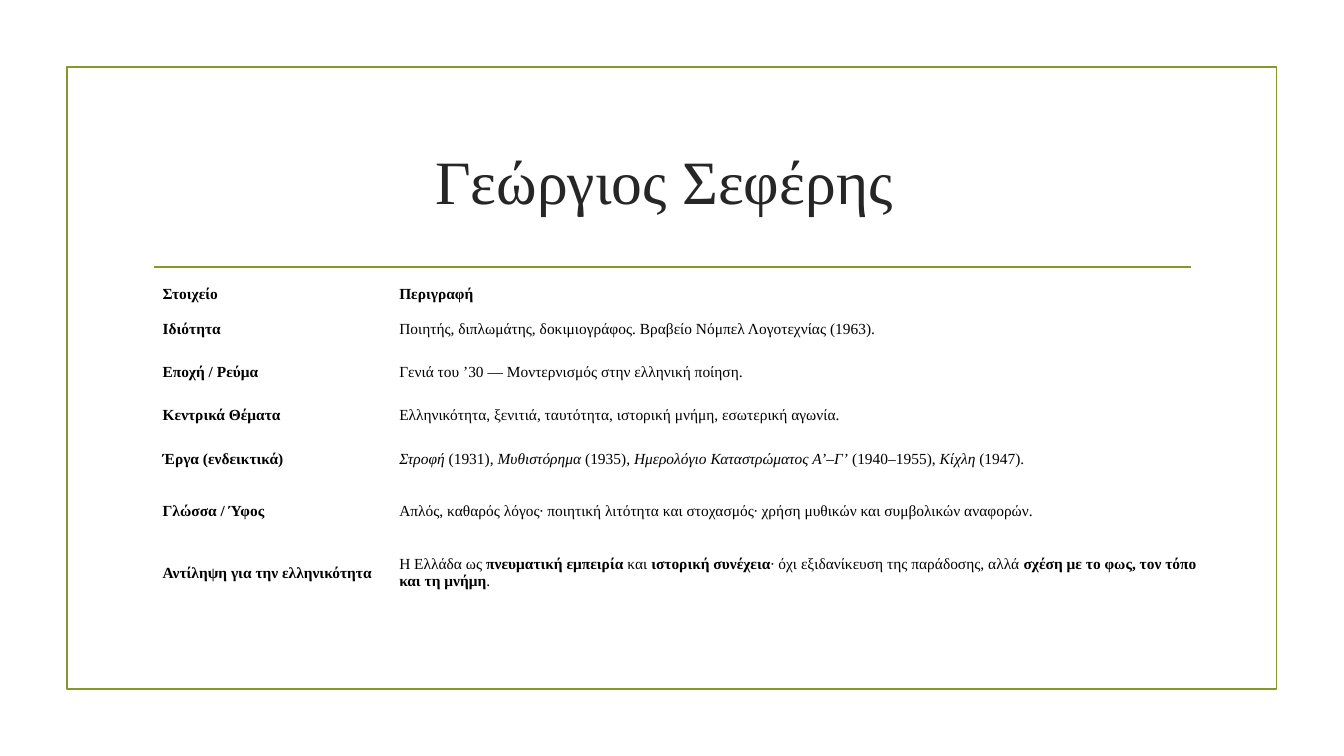
from lxml import etree
from pptx import Presentation
from pptx.dml.color import RGBColor
from pptx.enum import shapes, text
from pptx.oxml.ns import qn
from pptx.util import Pt

COLORS = {"olive": "83992A", "title": "262626", "body": "000000"}

# *bold* and _italic_ mark emphasis inside a cell.
ROWS = [
    (18, "*Στοιχείο*", "*Περιγραφή*"),
    (31, "*Ιδιότητα*",
     "Ποιητής, διπλωμάτης, δοκιμιογράφος. Βραβείο Νόμπελ Λογοτεχνίας (1963)."),
    (31, "*Εποχή / Ρεύμα*", "Γενιά του ’30 — Μοντερνισμός στην ελληνική ποίηση."),
    (31, "*Κεντρικά Θέματα*",
     "Ελληνικότητα, ξενιτιά, ταυτότητα, ιστορική μνήμη, εσωτερική αγωνία."),
    (31, "*Έργα (ενδεικτικά)*",
     "_Στροφή_ (1931), _Μυθιστόρημα_ (1935), "
     "_Ημερολόγιο Καταστρώματος Α’–Γ’_ (1940–1955), _Κίχλη_ (1947)."),
    (44, "*Γλώσσα / Ύφος*",
     "Απλός, καθαρός λόγος∙ ποιητική λιτότητα και στοχασμός∙ "
     "χρήση μυθικών και συμβολικών αναφορών."),
    (44, "*Αντίληψη για την ελληνικότητα*",
     "Η Ελλάδα ως *πνευματική εμπειρία* και *ιστορική συνέχεια*∙ "
     "όχι εξιδανίκευση της παράδοσης, αλλά "
     "*σχέση με το φως, τον τόπο και τη μνήμη*."),
]


class SlideBuilder:
    font = "Times New Roman"
    line_width = 1.25

    def __init__(self, slide):
        self.slide = slide

    def style_line(self, line):
        line.color.rgb = RGBColor.from_string(COLORS["olive"])
        line.width = Pt(self.line_width)

    def style_run(self, r, size, color, bold=False, italic=False):
        r.font.name = self.font
        r.font.size = Pt(size)
        r.font.bold = bold
        r.font.italic = italic
        r.font.color.rgb = RGBColor.from_string(COLORS[color])

    def frame(self, x, y, w, h):
        sp = self.slide.shapes.add_shape(
            shapes.MSO_SHAPE.RECTANGLE, Pt(x), Pt(y), Pt(w), Pt(h))
        sp.shadow.inherit = False
        sp.fill.background()
        self.style_line(sp.line)

    def rule(self, x1, x2, y):
        cx = self.slide.shapes.add_connector(
            shapes.MSO_CONNECTOR.STRAIGHT, Pt(x1), Pt(y), Pt(x2), Pt(y))
        self.style_line(cx.line)
        etree.SubElement(cx._element.spPr, qn("a:effectLst"))

    def title(self, words, x, y, w, h):
        tf = self.slide.shapes.add_textbox(Pt(x), Pt(y), Pt(w), Pt(h)).text_frame
        tf.word_wrap = True
        tf.vertical_anchor = text.MSO_ANCHOR.MIDDLE
        tf.text = words
        p = tf.paragraphs[0]
        p.alignment = text.PP_ALIGN.CENTER
        self.style_run(p.runs[0], 44, "title")

    def cell(self, cell, marked):
        cell.fill.background()
        cell.vertical_anchor = text.MSO_ANCHOR.MIDDLE
        cell.margin_left = cell.margin_right = Pt(4.5)
        cell.margin_top = cell.margin_bottom = Pt(2.25)
        p = cell.text_frame.paragraphs[0]
        for i, part in enumerate(marked.split("*")):
            for j, piece in enumerate(part.split("_")):
                if piece:
                    r = p.add_run()
                    r.text = piece
                    self.style_run(r, 11, "body", i % 2 == 1, j % 2 == 1)

    def table(self, rows, x, y, widths):
        height = sum(row[0] for row in rows)
        table = self.slide.shapes.add_table(
            len(rows), len(widths), Pt(x), Pt(y), Pt(sum(widths)), Pt(height)).table
        table.first_row = table.horz_banding = False
        for column, width in zip(table.columns, widths):
            column.width = Pt(width)
        for i, (row_height, *cells) in enumerate(rows):
            table.rows[i].height = Pt(row_height)
            for j, marked in enumerate(cells):
                self.cell(table.cell(i, j), marked)


def main():
    prs = Presentation()
    prs.slide_width, prs.slide_height = Pt(960), Pt(540)
    s = SlideBuilder(prs.slides.add_slide(prs.slide_layouts[6]))
    s.frame(47.75, 48, 864, 444)
    s.rule(110, 850.5, 190.75)
    s.title("Γεώργιος Σεφέρης ", 102, 77, 756, 103)
    s.table(ROWS, 111.75, 201.5, [169, 587])
    prs.save("out.pptx")


if __name__ == "__main__":
    main()
